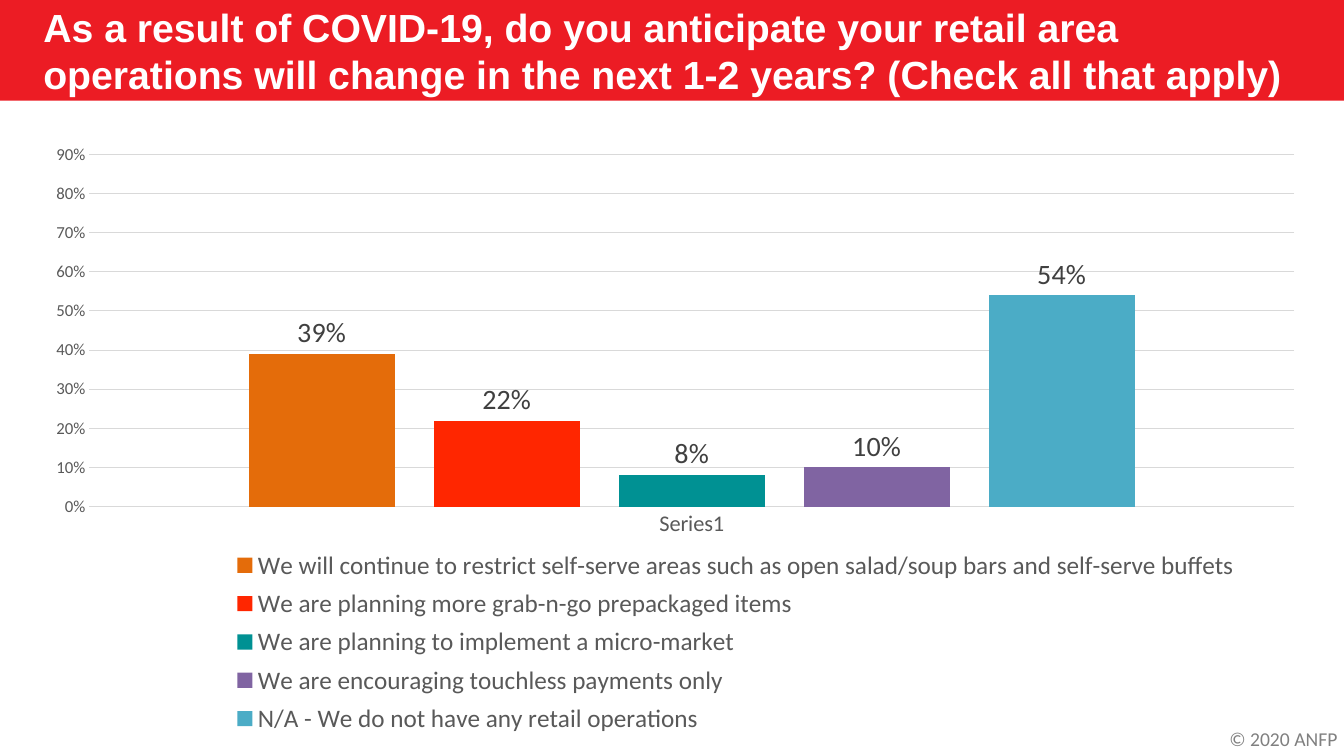
import pptx
import pptx.chart.data
import pptx.dml.color
import pptx.enum.chart
import pptx.enum.shapes
import pptx.enum.text
import pptx.oxml
import pptx.oxml.ns
import pptx.util

Inches, Pt = pptx.util.Inches, pptx.util.Pt
Align, Anchor = pptx.enum.text.PP_ALIGN, pptx.enum.text.MSO_ANCHOR
Chart = pptx.enum.chart

TITLE = ("As a result of COVID-19, do you anticipate your retail area "
         "operations will change in the next 1-2 years? (Check all that apply)")
CREDIT = "© 2020 ANFP"
GROUP = "Series1"
ANSWERS = [
    ("We will continue to restrict self-serve areas such as open "
     "salad/soup bars and self-serve buffets", 0.39, "E46C0A"),
    ("We are planning more grab-n-go prepackaged items", 0.22, "FF2600"),
    ("We are planning to implement a micro-market", 0.08, "009193"),
    ("We are encouraging touchless payments only", 0.10, "8064A2"),
    ("N/A - We do not have any retail operations", 0.54, "4BACC6"),
]
RED, WHITE, GRID = "EC1C24", "FFFFFF", "D9D9D9"
DARK, TEXT, PALE = "404040", "595959", "808080"


def color(code):
    return pptx.dml.color.RGBColor.from_string(code)


def style(font, size, code, name="Calibri", bold=False):
    font.size, font.name, font.bold = Pt(size), name, bold
    font.color.rgb = color(code)


def paint(line):
    line.color.rgb = color(GRID)
    line.width = Pt(0.75)


def place(parent, before, x, y, w, h, inner=False):
    """Give a chart part a manual layout, as fractions of the chart."""
    for old in parent.findall(pptx.oxml.ns.qn("c:layout")):
        parent.remove(old)
    target = '<c:layoutTarget val="inner"/>' if inner else ""
    parts = "".join(f'<c:{tag} val="{val}"/>' for tag, val in (
        ("xMode", "edge"), ("yMode", "edge"),
        ("x", x), ("y", y), ("w", w), ("h", h)))
    layout = pptx.oxml.parse_xml(
        f'<c:layout {pptx.oxml.ns.nsdecls("c")}><c:manualLayout>'
        f'{target}{parts}</c:manualLayout></c:layout>')
    parent.find(pptx.oxml.ns.qn(before)).addprevious(layout)


def add_title(slide):
    band = slide.shapes.add_shape(pptx.enum.shapes.MSO_SHAPE.RECTANGLE,
                                  0, 0, Inches(13.33), Inches(1))
    band.shadow.inherit = False
    band.fill.solid()
    band.fill.fore_color.rgb = color(RED)
    band.line.fill.background()
    slide.shapes._spTree.insert(2, band._element)

    title = slide.shapes.title
    title.left, title.top = Inches(0.33), Inches(0.12)
    title.width, title.height = Inches(12.84), Inches(0.75)
    frame = title.text_frame
    frame.text = TITLE
    frame.word_wrap = True
    frame.auto_size = pptx.enum.text.MSO_AUTO_SIZE.NONE
    frame.vertical_anchor = Anchor.MIDDLE
    line = frame.paragraphs[0]
    line.alignment = Align.LEFT
    style(line.font, 28, WHITE, "Arial", True)


def add_bars(slide):
    data = pptx.chart.data.CategoryChartData(number_format="0%")
    data.categories = [GROUP]
    for name, share, _ in ANSWERS:
        data.add_series(name, [share])
    chart = slide.shapes.add_chart(
        Chart.XL_CHART_TYPE.COLUMN_CLUSTERED, Inches(0.33), Inches(1.36),
        Inches(12.67), Inches(6), data).chart
    chart.has_title = False
    style(chart.font, 10, "000000")

    plot = chart.plots[0]
    plot.gap_width, plot.overlap = 219, -27
    plot.vary_by_categories = False
    for bar, (_, _, code) in zip(plot.series, ANSWERS):
        bar.format.fill.solid()
        bar.format.fill.fore_color.rgb = color(code)
        labels = bar.data_labels
        labels.show_value = True
        labels.position = Chart.XL_LABEL_POSITION.OUTSIDE_END
        style(labels.font, 20, DARK)

    cats, vals = chart.category_axis, chart.value_axis
    for axis, size in ((cats, 16), (vals, 12)):
        axis.major_tick_mark = axis.minor_tick_mark = Chart.XL_TICK_MARK.NONE
        style(axis.tick_labels.font, size, TEXT)
    paint(cats.format.line)
    vals.format.line.fill.background()
    paint(vals.major_gridlines.format.line)
    vals.minimum_scale, vals.maximum_scale, vals.major_unit = 0, 0.9, 0.1
    vals.tick_labels.number_format = "0%"
    vals.tick_labels.number_format_is_linked = False

    chart.has_legend = True
    legend = chart.legend
    legend.position = Chart.XL_LEGEND_POSITION.BOTTOM
    legend.include_in_layout = False
    style(legend.font, 18, TEXT)
    place(legend._element, "c:overlay", 0.14, 0.67, 0.82, 0.33)
    area = chart._chartSpace.chart.plotArea
    place(area, "c:barChart", 0.044, 0.029, 0.943, 0.582, inner=True)


def add_credit(slide):
    box = slide.shapes.add_textbox(Inches(12.08), Inches(7.16),
                                   Inches(1.3), Inches(0.34))
    frame = box.text_frame
    frame.word_wrap = True
    frame.text = CREDIT
    line = frame.paragraphs[0]
    line.alignment = Align.CENTER
    style(line.font, 14, PALE)


def main():
    deck = pptx.Presentation()
    deck.slide_width, deck.slide_height = Inches(13.33), Inches(7.5)
    slide = deck.slides.add_slide(deck.slide_layouts[5])
    add_title(slide)
    add_bars(slide)
    add_credit(slide)
    deck.save("out.pptx")


if __name__ == "__main__":
    main()
